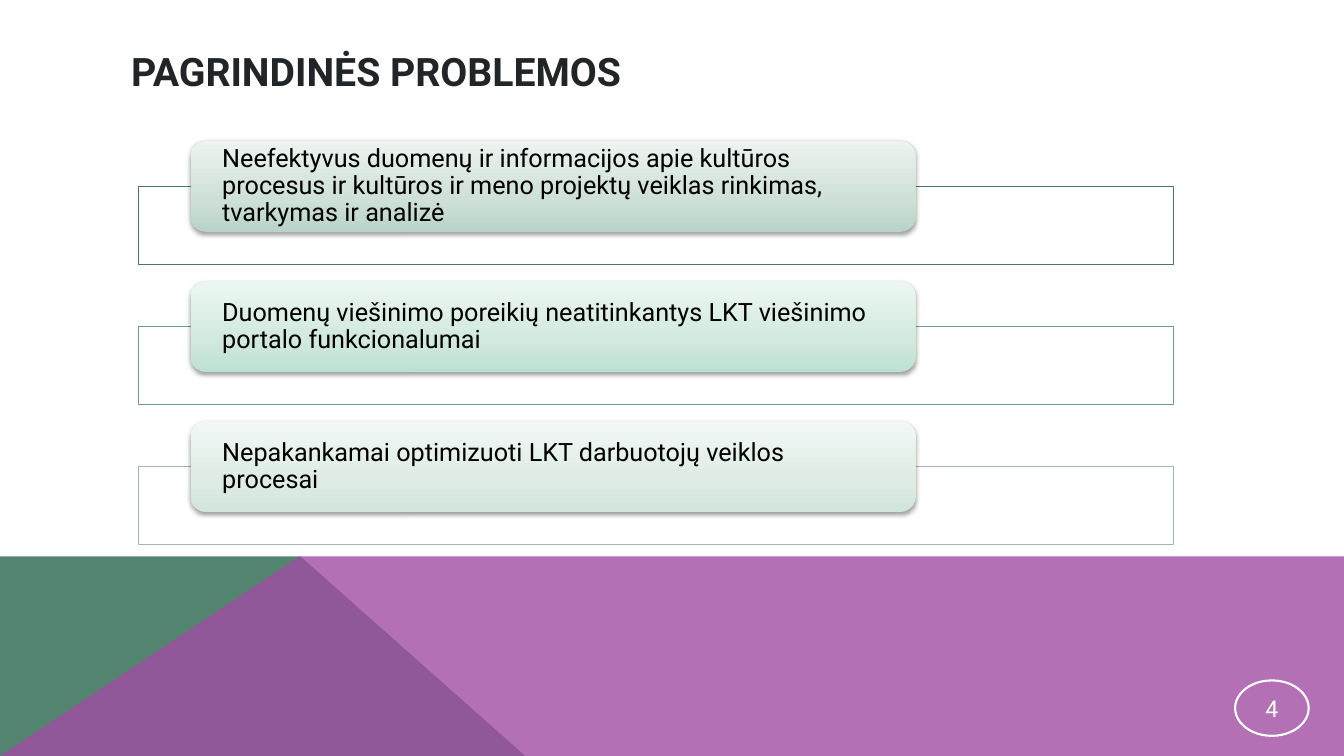
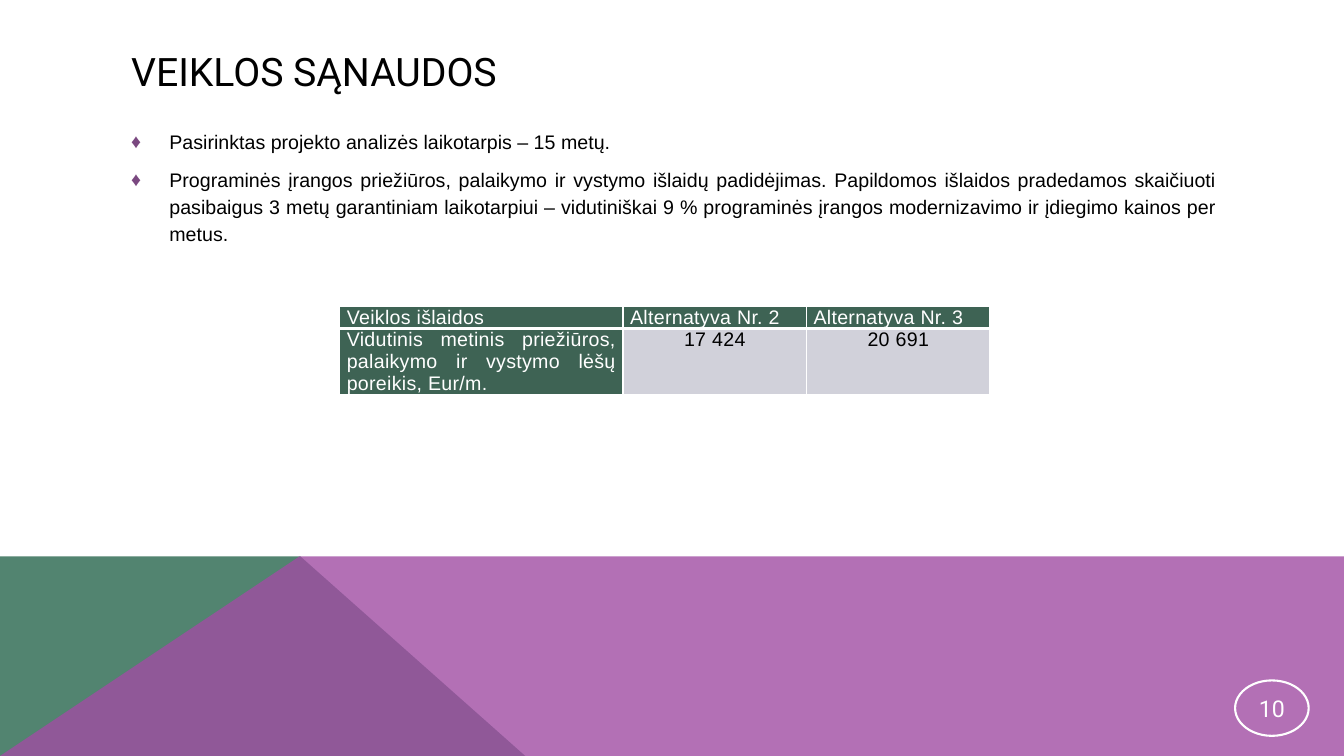
from copy import deepcopy

from lxml import etree
from pptx import Presentation
from pptx.dml.color import RGBColor
from pptx.enum.shapes import MSO_SHAPE
from pptx.enum.text import MSO_ANCHOR, MSO_AUTO_SIZE, PP_ALIGN
from pptx.oxml.ns import qn
from pptx.util import Inches, Pt

GREEN, PURPLE, BULLET = "528470", "A04DA3", "7A4880"
TABLE_GREEN, TABLE_GREY = "3E6354", "D1D1DA"
WHITE, BLACK, DARK = "FFFFFF", "000000", "222527"
HEAD_FONT, BODY_FONT = "Roboto", "Arial"
TITLE_ONLY, TITLE_BODY = 5, 1

PROBLEMS = [
    ("Neefektyvus duomenų ir informacijos apie kultūros procesus ir kultūros ir meno "
     "projektų veiklas rinkimas, tvarkymas ir analizė",
     "4A7866", ("B8D3C7", "CEE0D7", "ECF3F0")),
    ("Duomenų viešinimo poreikių neatitinkantys LKT viešinimo portalo funkcionalumai",
     "729B8A", ("BDE1D0", "D1E9DE", "EDF7F2")),
    ("Nepakankamai optimizuoti LKT darbuotojų veiklos procesai",
     "A3B5AD", ("D1E5DC", "DEECE5", "F2F8F5")),
]
COST_NOTES = [
    "Pasirinktas projekto analizės laikotarpis – 15 metų.",
    "Programinės įrangos priežiūros, palaikymo ir vystymo išlaidų padidėjimas. "
    "Papildomos išlaidos pradedamos skaičiuoti pasibaigus 3 metų garantiniam laikotarpiui "
    "– vidutiniškai 9 % programinės įrangos modernizavimo ir įdiegimo kainos per metus.",
]
COSTS = [
    ("Veiklos išlaidos", "Alternatyva Nr. 2", "Alternatyva Nr. 3"),
    ("Vidutinis metinis priežiūros, palaikymo ir vystymo lėšų poreikis, Eur/m.",
     "17 424", "20 691"),
]


def rgb(color):
    return RGBColor.from_string(color)


def sub(parent, tag, **attrs):
    return etree.SubElement(parent, qn(tag), {k: str(v) for k, v in attrs.items()})


def place(sp, left, top, width, height):
    sp.left, sp.top, sp.width, sp.height = (Inches(v) for v in (left, top, width, height))


def set_insets(holder, side, edge):
    holder.margin_left = holder.margin_right = Inches(side)
    holder.margin_top = holder.margin_bottom = Inches(edge)


def add_run(p, text, size, font, color, bold=False):
    r = p.add_run()
    r.text = text
    r.font.size = Pt(size)
    r.font.name = font
    r.font.bold = bold
    r.font.color.rgb = rgb(color)
    return r


def paint(sp, color, alpha=100):
    sp.shadow.inherit = False
    sp.fill.solid()
    sp.fill.fore_color.rgb = rgb(color)
    if alpha < 100:
        clr = sp.fill._xPr.find(qn("a:solidFill"))[0]
        sub(clr, "a:alpha", val=alpha * 1000)


def outline(sp, color, width):
    sp.line.color.rgb = rgb(color)
    sp.line.width = Pt(width)


def add_polygon(s, points, color, alpha=100):
    corners = [(Inches(x), Inches(y)) for x, y in points]
    builder = s.shapes.build_freeform(*corners[0], scale=1.0)
    builder.add_line_segments(corners[1:], close=True)
    sp = builder.convert_to_shape()
    paint(sp, color, alpha)
    sp.line.fill.background()


def add_number(s, number):
    sp = s.shapes.add_shape(MSO_SHAPE.OVAL, 0, 0, 0, 0)
    place(sp, 12.25, 6.75, 0.73, 0.55)
    sp.shadow.inherit = False
    sp.fill.background()
    outline(sp, WHITE, 1.5)
    tf = sp.text_frame
    set_insets(tf, 0.01, 0.01)
    tf.vertical_anchor = MSO_ANCHOR.MIDDLE
    p = tf.paragraphs[0]
    p.alignment = PP_ALIGN.CENTER
    add_run(p, str(number), 16.5, HEAD_FONT, WHITE)


def new_slide(prs, layout, title, number, color=BLACK, bold=False):
    s = prs.slides.add_slide(prs.slide_layouts[layout])
    add_polygon(s, [(0, 7.5), (0, 5.52), (2.98, 5.52), (5.21, 7.5)], GREEN)
    add_polygon(s, [(0, 7.5), (2.97, 5.52), (13.33, 5.52), (13.33, 7.5)], PURPLE, 80)
    place(s.shapes.title, 1.2, 0.4, 10.97, 0.6)
    tf = s.shapes.title.text_frame
    tf.auto_size = MSO_AUTO_SIZE.NONE
    tf.vertical_anchor = MSO_ANCHOR.MIDDLE
    p = tf.paragraphs[0]
    p.alignment = PP_ALIGN.LEFT
    add_run(p, title, 28, HEAD_FONT, color, bold)
    add_number(s, number)
    return s


def set_gradient(sp, colors):
    sp.fill.gradient()
    sp.fill.gradient_angle = 90
    stops = sp._element.spPr.find(qn("a:gradFill")).find(qn("a:gsLst"))
    stops.append(deepcopy(stops[0]))
    for stop, color, position in zip(sp.fill.gradient_stops, colors, (0, 0.35, 1)):
        stop.color.rgb = rgb(color)
        stop.position = position


def add_shadow(sp):
    sp.shadow.inherit = False
    effects = sp._element.spPr.find(qn("a:effectLst"))
    shadow = sub(effects, "a:outerShdw", blurRad=Pt(3.1), dist=Pt(1.6),
                 dir=5400000, rotWithShape=0)
    sub(sub(shadow, "a:srgbClr", val=BLACK), "a:alpha", val=38000)


def add_problem(s, top, text, line, colors):
    frame = s.shapes.add_shape(MSO_SHAPE.RECTANGLE, 0, 0, 0, 0)
    place(frame, 1.37, top + 0.45, 10.27, 0.77)
    paint(frame, WHITE, 90)
    outline(frame, line, 0.75)
    card = s.shapes.add_shape(MSO_SHAPE.ROUNDED_RECTANGLE, 0, 0, 0, 0)
    place(card, 1.89, top, 7.19, 0.9)
    set_gradient(card, colors)
    card.line.fill.background()
    add_shadow(card)
    tf = card.text_frame
    tf.word_wrap = True
    tf.vertical_anchor = MSO_ANCHOR.MIDDLE
    set_insets(tf, 0.27, 0)
    p = tf.paragraphs[0]
    p.alignment = PP_ALIGN.LEFT
    p.line_spacing = 0.9
    add_run(p, text, 18, HEAD_FONT, BLACK)


def add_bullets(body, items):
    place(body, 1.2, 1.2, 10.97, 1.5)
    tf = body.text_frame
    tf.auto_size = MSO_AUTO_SIZE.NONE
    tf.vertical_anchor = MSO_ANCHOR.TOP
    for i, text in enumerate(items):
        p = tf.add_paragraph() if i else tf.paragraphs[0]
        p.alignment = PP_ALIGN.JUSTIFY
        p.line_spacing = 1.15
        p.space_before = Pt(8)
        pPr = p._p.get_or_add_pPr()
        pPr.set("marL", str(Inches(0.38)))
        pPr.set("indent", str(-Inches(0.38)))
        sub(sub(pPr, "a:buClr"), "a:srgbClr", val=BULLET)
        sub(pPr, "a:buFont", typeface=BODY_FONT)
        sub(pPr, "a:buChar", char="♦")
        add_run(p, text, 14, BODY_FONT, BLACK)


def set_borders(cell, bottom):
    tcPr = cell._tc.get_or_add_tcPr()
    widths = {"a:lnL": 1, "a:lnR": 1, "a:lnT": 1, "a:lnB": bottom}
    for i, (tag, width) in enumerate(widths.items()):
        ln = etree.Element(qn(tag), {"w": str(Pt(width))})
        sub(sub(ln, "a:solidFill"), "a:srgbClr", val=WHITE)
        tcPr.insert(i, ln)


def fill_cell(cell, text, is_value, bottom):
    cell.fill.solid()
    cell.fill.fore_color.rgb = rgb(TABLE_GREY if is_value else TABLE_GREEN)
    set_borders(cell, bottom)
    set_insets(cell, 0.07, 0)
    p = cell.text_frame.paragraphs[0]
    p.alignment = PP_ALIGN.CENTER if is_value else PP_ALIGN.JUSTIFY
    r = add_run(p, text, 14, BODY_FONT, BLACK if is_value else WHITE)
    r.font._element.set("spc", "20")


def add_cost_table(s, rows):
    frame = s.shapes.add_table(len(rows), len(rows[0]), Inches(3.37), Inches(3.04),
                               Inches(6.45), Inches(0.87))
    table = frame.table
    for column, width in zip(table.columns, (2.81, 1.82, 1.82)):
        column.width = Inches(width)
    for row, height in zip(table.rows, (0.21, 0.66)):
        row.height = Inches(height)
    for i, texts in enumerate(rows):
        for j, text in enumerate(texts):
            fill_cell(table.cell(i, j), text, i > 0 and j > 0, 1 if i else 3)


def main():
    prs = Presentation()
    prs.slide_width, prs.slide_height = Inches(13.33), Inches(7.5)

    s = new_slide(prs, TITLE_ONLY, "PAGRINDINĖS PROBLEMOS", 4, DARK, True)
    for i, problem in enumerate(PROBLEMS):
        add_problem(s, 1.4 + 1.39 * i, *problem)

    s = new_slide(prs, TITLE_BODY, "VEIKLOS SĄNAUDOS", 10)
    add_bullets(s.placeholders[1], COST_NOTES)
    add_cost_table(s, COSTS)

    prs.save("out.pptx")


if __name__ == "__main__":
    main()
